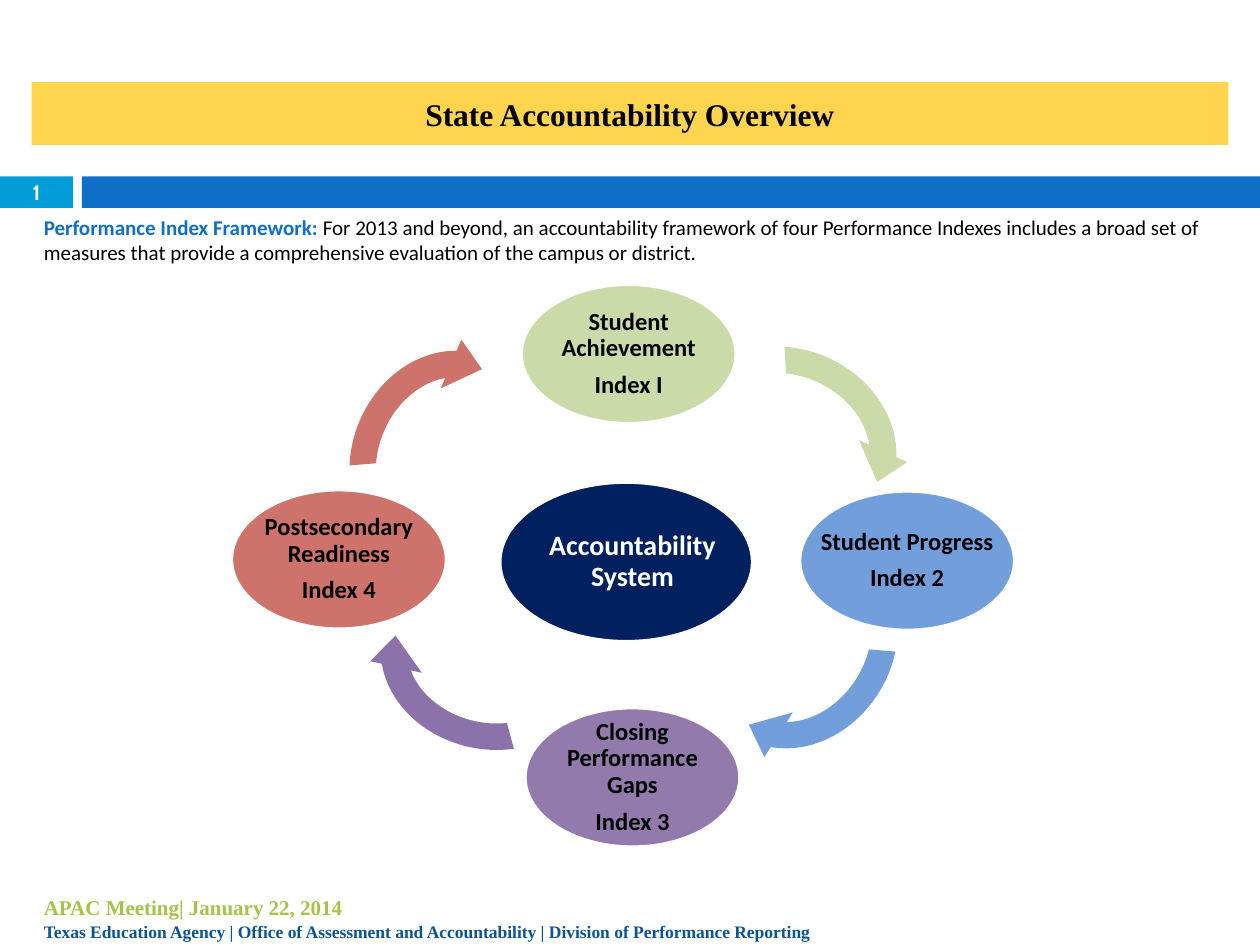
from pptx import Presentation
from pptx.dml.color import RGBColor
from pptx.enum.shapes import MSO_SHAPE
from pptx.enum.text import MSO_ANCHOR, PP_ALIGN
from pptx.util import Inches, Pt

COLOR = {
    "black": "000000", "white": "FFFFFF", "gold": "FFD54F",
    "cyan": "009DD9", "blue": "0F6FC6", "navy": "002060",
    "lime": "A5C249", "deep": "0B5395", "green": "CADAA9",
    "sky": "729FDC", "plum": "927AAD", "violet": "8B72AA", "red": "CD736B",
}
SERIF, SANS = "Times New Roman", "Calibri"

# Index ovals: left, top, fill, text width, name, index
NODES = [
    (4.14, 2.26, "green", 1.2, "Student Achievement", "Index I"),
    (6.35, 3.9, "sky", 1.51, "Student Progress", "Index 2"),
    (4.17, 5.62, "plum", 1.21, "Closing Performance Gaps", "Index 3"),
    (1.84, 3.89, "red", 1.25, "Postsecondary Readiness", "Index 4"),
]
# Cycle arrows: left, top, turn, fill
ARROWS = [
    (5.3, 2.67, 24.5, "green"),
    (5.38, 4.27, 122.4, "sky"),
    (2.91, 4.37, 192.6, "violet"),
    (2.56, 2.79, 292.9, "red"),
]


def rgb(name):
    return RGBColor.from_string(COLOR[name])


def write(frame, paras, size=12, font=SANS, align=PP_ALIGN.LEFT,
          anchor=MSO_ANCHOR.TOP, inset=None, space=None, after=None):
    """Fill a frame; each paragraph is a list of (text, color, bold)."""
    frame.word_wrap = True
    frame.vertical_anchor = anchor
    if inset is not None:
        frame.margin_left = frame.margin_right = Inches(inset)
        frame.margin_top = frame.margin_bottom = Inches(inset)
    for i, runs in enumerate(paras):
        para = frame.add_paragraph() if i else frame.paragraphs[0]
        para.alignment = align
        if space is not None:
            para.line_spacing = space
        if after is not None:
            para.space_after = Pt(after)
        for text, color, bold in runs:
            run = para.add_run()
            run.text = text
            run.font.size, run.font.name, run.font.bold = Pt(size), font, bold
            run.font.color.rgb = rgb(color)


def label(shapes, box, paras, **style):
    text = shapes.add_textbox(*map(Inches, box))
    write(text.text_frame, paras, **style)


def block(shapes, kind, box, fill, line=None):
    shape = shapes.add_shape(kind, *map(Inches, box))
    shape.shadow.inherit = False
    shape.fill.solid()
    shape.fill.fore_color.rgb = rgb(fill)
    if line:
        shape.line.color.rgb = rgb(line)
        shape.line.width = Pt(1.5)
    else:
        shape.line.fill.background()
    return shape


def oval(slide, box, fill, inner, lines, color="black", size=14, shift=0):
    """Group an oval with a text box centred on it."""
    left, top, width, height = box
    wide, high = inner
    shapes = slide.shapes.add_group_shape().shapes
    block(shapes, MSO_SHAPE.OVAL, box, fill, "white")
    place = (left + (width - wide) / 2 + shift, top + (height - high) / 2,
             wide, high)
    label(shapes, place, [[(line, color, True)] for line in lines], size=size,
          align=PP_ALIGN.CENTER, anchor=MSO_ANCHOR.MIDDLE, inset=0.02,
          space=0.9, after=size * 0.42)


def arrow(slide, left, top, turn, fill):
    shape = block(slide.shapes, MSO_SHAPE.CIRCULAR_ARROW,
                  (left, top, 1.94, 1.68), fill)
    for i, value in enumerate((0.125, 11.423, 204.577, 145.349, 0.125)):
        shape.adjustments[i] = value
    shape.rotation = turn


def head(slide):
    # Title band
    title = slide.shapes.title
    title.left, title.top = Inches(0.25), Inches(0.65)
    title.width, title.height = Inches(9.5), Inches(0.5)
    title.fill.solid()
    title.fill.fore_color.rgb = rgb("gold")
    write(title.text_frame, [[("State Accountability Overview", "black", True)]],
          size=18, font=SERIF, align=PP_ALIGN.CENTER, anchor=MSO_ANCHOR.MIDDLE)
    # Divider bar with page number
    block(slide.shapes, MSO_SHAPE.RECTANGLE, (0, 1.4, 0.58, 0.25), "cyan")
    block(slide.shapes, MSO_SHAPE.RECTANGLE, (0.65, 1.4, 9.35, 0.25), "blue")
    label(slide.shapes, (0, 1.39, 0.58, 0.27), [[("1", "white", True)]],
          size=11.9, font="Cabin", align=PP_ALIGN.CENTER,
          anchor=MSO_ANCHOR.MIDDLE)
    # Introduction
    label(slide.shapes, (0.25, 1.65, 9.5, 0.5), [[
        ("Performance Index Framework: ", "blue", True),
        ("For 2013 and beyond, an accountability framework of four "
         "Performance Indexes includes a broad set of measures that provide "
         "a comprehensive evaluation of the campus or district.",
         "black", False)]])


def foot(slide):
    label(slide.shapes, (0.25, 6.85, 4.03, 0.45),
          [[("APAC Meeting| January 22, 2014", "lime", True)]],
          font=SERIF, space=Pt(29))
    label(slide.shapes, (0.25, 7.07, 9, 0.41),
          [[("Texas Education Agency | Office of Assessment and Accountability"
             " | Division of Performance Reporting", "deep", True)]],
          size=10, font=SERIF, space=Pt(26))


def cycle(slide):
    for left, top, fill, wide, *lines in NODES:
        oval(slide, (left, top, 1.7, 1.1), fill, (wide, 0.78), lines)
    for item in ARROWS:
        arrow(slide, *item)
    # Hub
    oval(slide, (3.97, 3.83, 2, 1.26), "navy", (1.48, 0.89),
         ["Accountability System"], color="white", size=16, shift=0.05)


def main():
    deck = Presentation()
    deck.slide_width, deck.slide_height = Inches(10), Inches(7.5)
    slide = deck.slides.add_slide(deck.slide_layouts[5])
    head(slide)
    foot(slide)
    cycle(slide)
    deck.save("out.pptx")


if __name__ == "__main__":
    main()
